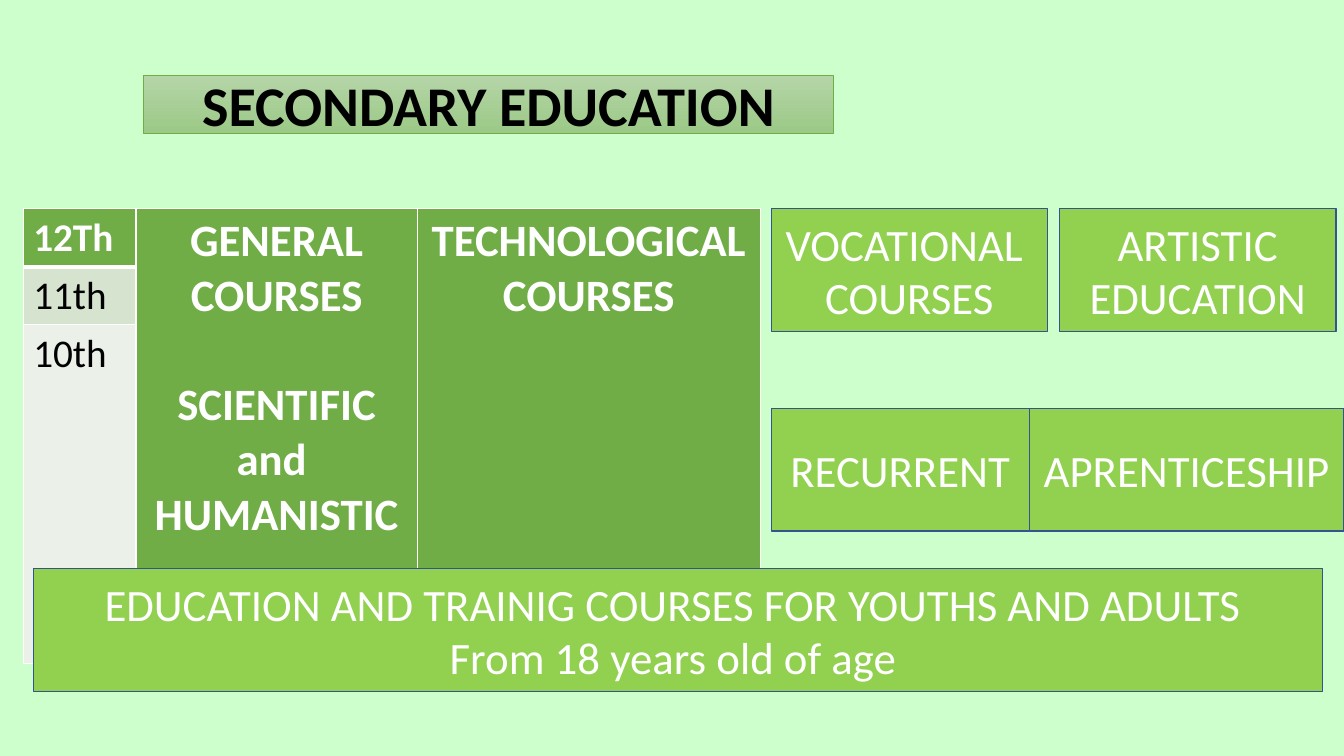
from dataclasses import dataclass

from lxml import etree
from pptx import Presentation
from pptx import util as u
from pptx.dml.color import RGBColor
from pptx.enum import shapes, text
from pptx.oxml import ns


@dataclass(frozen=True)
class Theme:
    font: str = "Calibri"
    background: str = "CCFFCC"
    title_top: str = "B5D5A7"
    title_bottom: str = "9CC987"
    header: str = "70AD47"
    band_dark: str = "D5E3CF"
    band_light: str = "EBF1E9"
    box: str = "92D050"
    outline: str = "325491"
    light: str = "FFFFFF"
    dark: str = "000000"
    title_size: int = 40
    course_size: int = 32
    grade_size: int = 28
    gap: int = 39


@dataclass(frozen=True)
class CourseBox:
    left: float
    top: float
    width: float
    lines: tuple[str, ...]


@dataclass(frozen=True)
class Grade:
    label: str
    fill: str
    color: str
    bold: bool
    top_line: int
    bottom_line: int


THEME = Theme()
BOX_HEIGHT = 1.22
TOP_ROW = 2.07
MIDDLE_ROW = 4.05

COURSE_BOXES = (
    CourseBox(7.65, TOP_ROW, 2.74, ("VOCATIONAL ", "COURSES")),
    CourseBox(10.51, TOP_ROW, 2.74, ("ARTISTIC", "EDUCATION")),
    CourseBox(7.65, MIDDLE_ROW, 2.56, ("RECURRENT",)),
    CourseBox(10.21, MIDDLE_ROW, 3.12, ("APRENTICESHIP",)),
    CourseBox(0.33, 5.64, 12.79, (
        "EDUCATION AND TRAINIG COURSES FOR YOUTHS AND ADULTS ",
        "From 18 years old of age ",
    )),
)

GRADES = (
    Grade("12Th", THEME.header, THEME.light, True, 1, 3),
    Grade("11th", THEME.band_dark, THEME.dark, False, 3, 1),
    Grade("10th", THEME.band_light, THEME.dark, False, 1, 1),
)

COURSE_COLUMNS = (
    ("GENERAL COURSES", "SCIENTIFIC and ", "HUMANISTIC"),
    ("TECHNOLOGICAL ", "COURSES"),
)
COLUMN_WIDTHS = (1.12, 2.79, 3.4)
ROW_HEIGHT = 0.41


def rgb(value: str) -> RGBColor:
    return RGBColor.from_string(value)


def write(frame, lines: tuple[str, ...], *, size: int = THEME.course_size,
          color: str = THEME.light, bold: bool = False,
          align=text.PP_ALIGN.CENTER) -> None:
    frame.word_wrap = True
    for index, line in enumerate(lines):
        paragraph = frame.add_paragraph() if index else frame.paragraphs[0]
        paragraph.alignment = align
        run = paragraph.add_run()
        run.text = line
        run.font.name = THEME.font
        run.font.size = u.Pt(size)
        run.font.bold = bold
        run.font.color.rgb = rgb(color)


def outline(shape, color: str, width: float) -> None:
    shape.line.color.rgb = rgb(color)
    shape.line.width = u.Pt(width)


def draw_title(slide) -> None:
    title = slide.shapes.title
    title.left, title.top = u.Inches(1.42), u.Inches(0.75)
    title.width, title.height = u.Inches(6.85), u.Inches(0.57)
    title.fill.gradient()
    title.fill.gradient_angle = 270
    for stop, color in zip(title.fill.gradient_stops,
                           (THEME.title_top, THEME.title_bottom)):
        stop.color.rgb = rgb(color)
    outline(title, THEME.header, 0.5)
    title.text_frame.auto_size = text.MSO_AUTO_SIZE.NONE
    title.text_frame.vertical_anchor = text.MSO_ANCHOR.MIDDLE
    write(title.text_frame, ("SECONDARY EDUCATION",),
          size=THEME.title_size, color=THEME.dark, bold=True)


def style_cell(cell, fill: str, top: int, bottom: int) -> None:
    cell.fill.solid()
    cell.fill.fore_color.rgb = rgb(fill)
    properties = cell._tc.get_or_add_tcPr()
    sides = (("L", 1), ("R", 1), ("T", top), ("B", bottom))
    for position, (side, width) in enumerate(sides):
        border = etree.Element(ns.qn(f"a:ln{side}"), w=str(u.Pt(width)))
        solid = etree.SubElement(border, ns.qn("a:solidFill"))
        etree.SubElement(solid, ns.qn("a:srgbClr"), val=THEME.light)
        properties.insert(position, border)


def draw_grades(slide) -> None:
    frame = slide.shapes.add_table(
        len(GRADES), len(COLUMN_WIDTHS), u.Inches(0.23), u.Inches(TOP_ROW),
        u.Inches(sum(COLUMN_WIDTHS)), u.Inches(ROW_HEIGHT * len(GRADES)))
    grid = frame.table
    for column, width in zip(grid.columns, COLUMN_WIDTHS):
        column.width = u.Inches(width)
    for row, grade in enumerate(GRADES):
        grid.rows[row].height = u.Inches(ROW_HEIGHT)
        cell = grid.cell(row, 0)
        style_cell(cell, grade.fill, grade.top_line, grade.bottom_line)
        write(cell.text_frame, (grade.label,), size=THEME.grade_size,
              color=grade.color, bold=grade.bold, align=text.PP_ALIGN.LEFT)
    for column, lines in enumerate(COURSE_COLUMNS, start=1):
        cell = grid.cell(0, column)
        cell.merge(grid.cell(len(GRADES) - 1, column))
        style_cell(cell, THEME.header, 1, 3)
        write(cell.text_frame, lines, bold=True)
    general = grid.cell(0, 1).text_frame
    general.paragraphs[1].space_before = u.Pt(THEME.gap)


def draw_course(slide, course: CourseBox) -> None:
    box = slide.shapes.add_shape(
        shapes.MSO_SHAPE.RECTANGLE, u.Inches(course.left),
        u.Inches(course.top), u.Inches(course.width), u.Inches(BOX_HEIGHT))
    box.shadow.inherit = False
    box.fill.solid()
    box.fill.fore_color.rgb = rgb(THEME.box)
    outline(box, THEME.outline, 1)
    box.text_frame.vertical_anchor = text.MSO_ANCHOR.MIDDLE
    write(box.text_frame, course.lines)


def main() -> None:
    deck = Presentation()
    deck.slide_width, deck.slide_height = u.Inches(13.33), u.Inches(7.5)
    slide = deck.slides.add_slide(deck.slide_layouts.get_by_name("Title Only"))
    slide.background.fill.solid()
    slide.background.fill.fore_color.rgb = rgb(THEME.background)
    draw_title(slide)
    draw_grades(slide)
    for course in COURSE_BOXES:
        draw_course(slide, course)
    deck.save("out.pptx")


if __name__ == "__main__":
    main()
